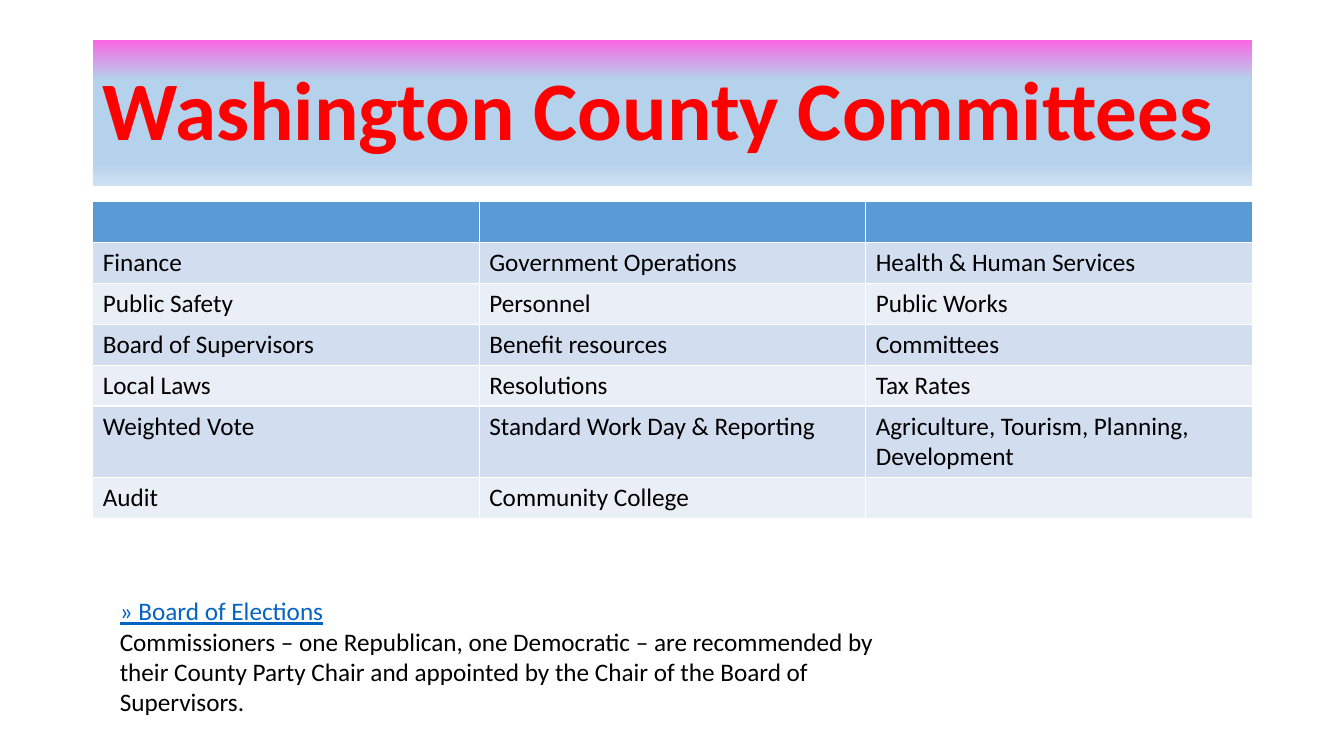
from lxml import etree
from pptx import Presentation
from pptx.dml.color import RGBColor
from pptx.enum import text
from pptx.oxml.ns import qn
from pptx.util import Inches, Pt

FONT = "Calibri"
RED = RGBColor(0xFF, 0x00, 0x00)
BLACK = RGBColor(0x00, 0x00, 0x00)
LINK_BLUE = RGBColor(0x05, 0x63, 0xC1)
HEADER_BLUE = RGBColor(0x5B, 0x9B, 0xD5)
BAND_DARK = RGBColor(0xD2, 0xDE, 0xEF)
BAND_LIGHT = RGBColor(0xEA, 0xEF, 0xF7)
PINK = RGBColor(0xF9, 0x67, 0xE4)
SKY = RGBColor(0xB5, 0xD2, 0xEC)
PALE_SKY = RGBColor(0xCE, 0xE1, 0xF2)
TITLE_STOPS = [(0, PINK), (27, SKY), (83, SKY), (100, PALE_SKY)]

LEFT, WIDTH = Inches(0.92), Inches(11.5)

COMMITTEES = [
    ("", "", ""),
    ("Finance", "Government Operations", "Health & Human Services"),
    ("Public Safety", "Personnel", "Public Works"),
    ("Board of Supervisors", "Benefit resources", "Committees"),
    ("Local Laws", "Resolutions", "Tax Rates"),
    ("Weighted Vote", "Standard Work Day & Reporting",
     "Agriculture, Tourism, Planning, Development"),
    ("Audit", "Community College", ""),
]
ELECTIONS_HEADING = "» Board of Elections"
ELECTIONS_TEXT = (
    "Commissioners – one Republican, one Democratic – are recommended by "
    "their County Party Chair and appointed by the Chair of the Board of "
    "Supervisors."
)


def style_font(paragraph, size, color):
    font = paragraph.font
    font.name, font.size = FONT, Pt(size)
    font.color.rgb = color
    return font


def fill_downward(shape, stops):
    """Fill with a top-to-bottom gradient of (percent, colour) stops."""
    shape.fill.gradient()
    shape.fill.gradient_angle = 270
    stop_list = shape.element.spPr.find(".//" + qn("a:gsLst"))
    for old_stop in list(stop_list):
        stop_list.remove(old_stop)
    for percent, color in stops:
        stop = etree.SubElement(stop_list, qn("a:gs"), pos=str(percent * 1000))
        etree.SubElement(stop, qn("a:srgbClr"), val=str(color))


def set_title(slide, wording):
    title = slide.shapes.title
    title.left, title.top = LEFT, Inches(0.4)
    title.width, title.height = WIDTH, Inches(1.45)
    fill_downward(title, TITLE_STOPS)
    frame = title.text_frame
    frame.text = wording
    frame.auto_size = text.MSO_AUTO_SIZE.NONE
    frame.vertical_anchor = text.MSO_ANCHOR.MIDDLE
    heading = frame.paragraphs[0]
    heading.alignment = text.PP_ALIGN.LEFT
    heading.line_spacing = 0.9
    style_font(heading, 59.4, RED).bold = True


def add_committee_table(slide, rows):
    table = slide.shapes.add_table(
        len(rows), len(rows[0]), LEFT, Inches(2), WIDTH, Inches(0.4) * len(rows)
    ).table
    for row_index, names in enumerate(rows):
        if row_index == 0:
            band = HEADER_BLUE
        else:
            band = BAND_DARK if row_index % 2 else BAND_LIGHT
        for column, name in enumerate(names):
            cell = table.cell(row_index, column)
            cell.fill.solid()
            cell.fill.fore_color.rgb = band
            cell.text = name
            style_font(cell.text_frame.paragraphs[0], 18, BLACK)


def add_elections_note(slide):
    note = slide.shapes.add_textbox(
        Inches(1.09), Inches(5.86), Inches(8.14), Inches(1.31)
    ).text_frame
    note.word_wrap = True
    note.text = ELECTIONS_HEADING
    heading = note.paragraphs[0]
    style_font(heading, 18, LINK_BLUE).underline = True
    body = note.add_paragraph()
    body.text = ELECTIONS_TEXT
    style_font(body, 18, BLACK)


def main():
    deck = Presentation()
    deck.slide_width, deck.slide_height = Inches(13.33), Inches(7.5)
    slide = deck.slides.add_slide(deck.slide_layouts.get_by_name("Title Only"))
    set_title(slide, "Washington County Committees")
    add_committee_table(slide, COMMITTEES)
    add_elections_note(slide)
    deck.save("out.pptx")


if __name__ == "__main__":
    main()
